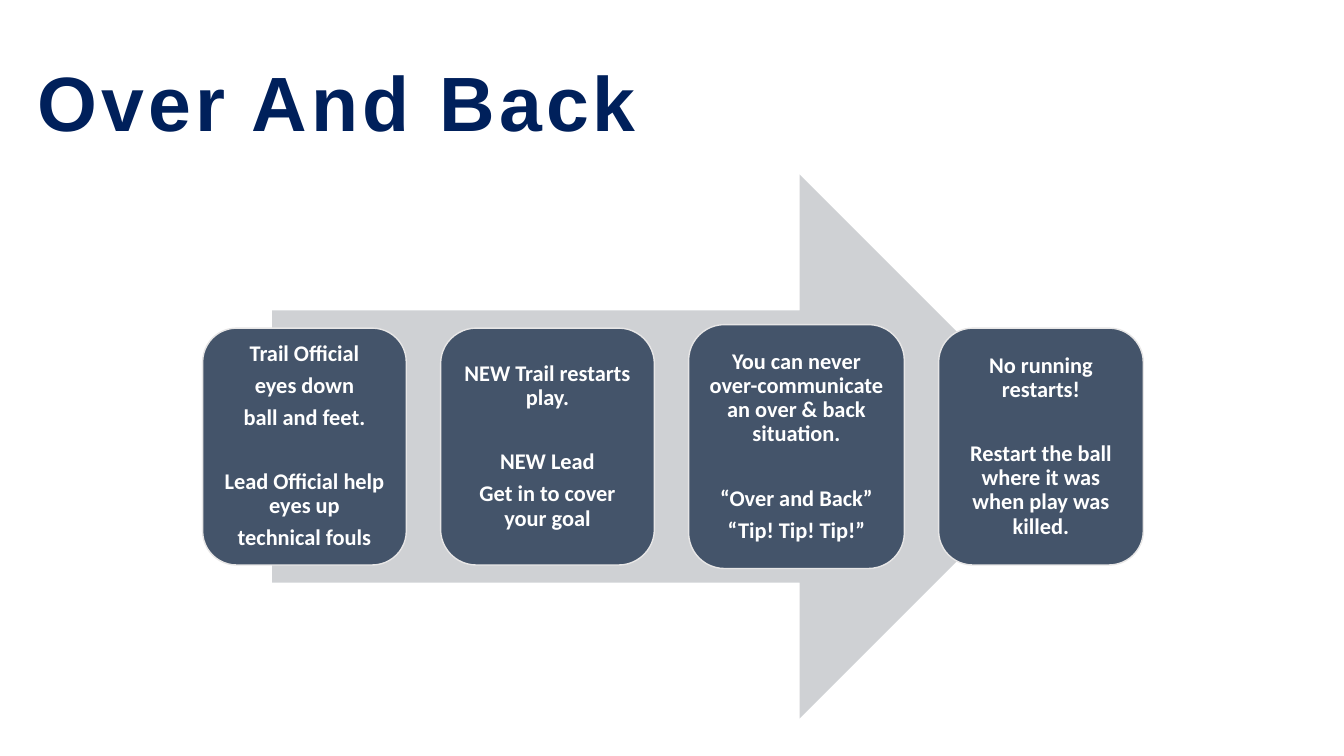
from pptx import Presentation
from pptx import util as u
from pptx.dml import color
from pptx.enum import shapes, text


def rgb(code):
    return color.RGBColor.from_string(code)


class Deck:
    NAVY, SLATE, GREY = "00205B", "44546A", "CFD1D4"
    EDGE, WHITE = "E7E6E6", "FFFFFF"

    def __init__(self):
        self.prs = Presentation()
        self.prs.slide_width = u.Inches(13.33)
        self.prs.slide_height = u.Inches(7.5)
        self.slide = self.prs.slides.add_slide(self.prs.slide_layouts[5])

    def run(self, para, words, face, size, ink):
        run = para.add_run()
        run.text = words
        run.font.name, run.font.size = face, u.Pt(size)
        run.font.bold = True
        run.font.color.rgb = rgb(ink)
        return run

    def title(self, words, *box):
        head = self.slide.shapes.title
        head.left, head.top, head.width, head.height = map(u.Inches, box)
        frame = head.text_frame
        frame.vertical_anchor = text.MSO_ANCHOR.TOP
        para = frame.paragraphs[0]
        para.alignment = text.PP_ALIGN.LEFT
        run = self.run(para, words, "Arial", 55, self.NAVY)
        run.font._element.set("spc", "300")

    def shape(self, kind, fill, *box, edge=None):
        item = self.slide.shapes.add_shape(kind, *map(u.Inches, box))
        item.shadow.inherit = False
        item.fill.solid()
        item.fill.fore_color.rgb = rgb(fill)
        if edge:
            item.line.color.rgb = rgb(edge)
            item.line.width = u.Pt(1)
        else:
            item.line.fill.background()
        return item

    def card(self, groups, *box):
        """Rounded card; each group of lines is set apart by a gap."""
        item = self.shape(shapes.MSO_SHAPE.ROUNDED_RECTANGLE, self.SLATE,
                          *box, edge=self.EDGE)
        frame = item.text_frame
        frame.word_wrap = True
        frame.vertical_anchor = text.MSO_ANCHOR.MIDDLE
        frame.margin_left = frame.margin_right = u.Inches(0.07)
        frame.margin_top = frame.margin_bottom = u.Inches(0.07)
        para = None
        for group in groups:
            for num, line in enumerate(group):
                first = para is None
                para = frame.paragraphs[0] if first else frame.add_paragraph()
                para.alignment = text.PP_ALIGN.CENTER
                para.line_spacing = 0.9
                para.space_after = u.Pt(5.6)
                if num == 0 and not first:
                    para.space_before = u.Pt(22.9)
                self.run(para, line, "Calibri", 16, self.WHITE)


def main():
    deck = Deck()

    # Title
    deck.title("Over And Back", 0.27, 0.49, 10.72, 1.03)

    # Arrow behind the cards
    deck.shape(shapes.MSO_SHAPE.RIGHT_ARROW, deck.GREY, 2.7, 1.73, 7.93, 5.4)

    # Cards: width, height, groups of lines
    cards = [
        (2.02, 2.35, [["Trail Official", "eyes down", "ball and feet."],
                      ["Lead Official help eyes up", "technical fouls"]]),
        (2.12, 2.35, [["NEW Trail restarts play."],
                      ["NEW Lead", "Get in to cover your goal"]]),
        (2.14, 2.42, [["You can never over-communicate an over "
                       "& back situation."],
                      ["“Over and Back”", "“Tip! Tip! Tip!”"]]),
        (2.03, 2.35, [["No running restarts!"],
                      ["Restart the ball where it was when play was killed."]]),
    ]
    left, mid, gap = 2.01, 4.43, 0.34
    for wide, high, groups in cards:
        deck.card(groups, left, mid - high / 2, wide, high)
        left += wide + gap

    deck.prs.save("out.pptx")


if __name__ == "__main__":
    main()
